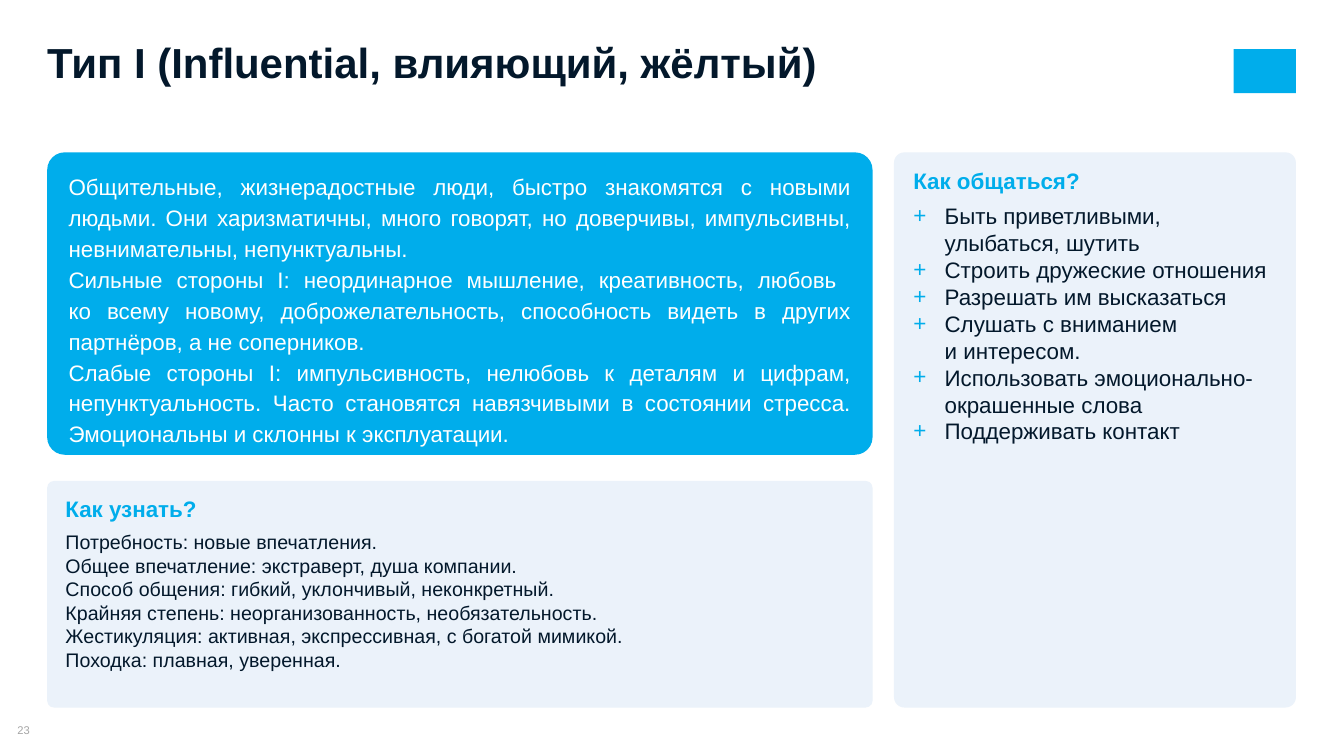
from copy import deepcopy

from lxml.etree import SubElement
from pptx import Presentation
from pptx.dml.color import RGBColor
from pptx.enum.shapes import MSO_SHAPE
from pptx.enum.text import MSO_ANCHOR, MSO_AUTO_SIZE, PP_ALIGN
from pptx.oxml.ns import qn
from pptx.util import Cm, Pt

COLORS = {
    "accent": "00ADEB",
    "ink": "03182B",
    "panel": "EBF2FA",
    "white": "FFFFFF",
    "muted": "A6A6A6",
}
LEFT, TOP, BOTTOM = 1.19, 3.84, 17.83
WIDE, SIDE_LEFT, SIDE_WIDE = 20.8, 22.53, 10.13
PAD_X, PAD_TOP, RADIUS_INSET = 0.41, 0.3, 0.29

TRAITS = [
    "Общительные, жизнерадостные люди, быстро знакомятся с новыми людьми. "
    "Они харизматичны, много говорят, но доверчивы, импульсивны, "
    "невнимательны, непунктуальны.",
    "Сильные стороны I: неординарное мышление, креативность, любовь \n"
    "ко всему новому, доброжелательность, способность видеть в других "
    "партнёров, а не соперников.",
    "Слабые стороны I: импульсивность, нелюбовь к деталям и цифрам, "
    "непунктуальность. Часто становятся навязчивыми в состоянии стресса. "
    "Эмоциональны и склонны к эксплуатации.",
]
SIGNS = [
    "Потребность: новые впечатления.",
    "Общее впечатление: экстраверт, душа компании.",
    "Способ общения: гибкий, уклончивый, неконкретный.",
    "Крайняя степень: неорганизованность, необязательность.",
    "Жестикуляция: активная, экспрессивная, с богатой мимикой.",
    "Походка: плавная, уверенная.",
]
ADVICE = [
    "Быть приветливыми, улыбаться, шутить",
    "Строить дружеские отношения",
    "Разрешать им высказаться",
    "Слушать с вниманием \nи интересом.",
    "Использовать эмоционально-окрашенные слова",
    "Поддерживать контакт",
]


def color(name):
    return RGBColor.from_string(COLORS[name])


def set_bullet(paragraph, sign):
    properties = paragraph._p.get_or_add_pPr()
    indent = Cm(0.79) if sign else 0
    properties.set("marL", str(indent))
    properties.set("indent", str(-indent))
    if sign:
        tint = SubElement(properties, qn("a:buClr"))
        SubElement(tint, qn("a:srgbClr"), val=COLORS["accent"])
        SubElement(properties, qn("a:buFont"), typeface="Arial")
        SubElement(properties, qn("a:buChar"), char=sign)
    else:
        SubElement(properties, qn("a:buNone"))


def write(frame, text, size=16, tint="ink", bold=False, align=PP_ALIGN.LEFT,
          spacing=1.0, after=0, bullet=None):
    paragraph = frame.paragraphs[0]
    if paragraph.runs:
        paragraph = frame.add_paragraph()
    paragraph.text = text
    paragraph.alignment = align
    paragraph.line_spacing = spacing
    paragraph.space_before = Pt(0)
    paragraph.space_after = Pt(after)
    set_bullet(paragraph, bullet)
    for run in paragraph.runs:
        run.font.name = "Arial"
        run.font.size = Pt(size)
        run.font.bold = bold
        run.font.color.rgb = color(tint)
    for line_break in paragraph._p.findall(qn("a:br")):
        line_break.append(deepcopy(paragraph.runs[0]._r.rPr))


def place(holder, left, top, width, height):
    holder.left, holder.top = Cm(left), Cm(top)
    holder.width, holder.height = Cm(width), Cm(height)


def set_frame(holder, pad_x=0, pad_top=0, anchor=MSO_ANCHOR.TOP):
    frame = holder.text_frame
    frame.word_wrap = True
    frame.auto_size = MSO_AUTO_SIZE.NONE
    frame.vertical_anchor = anchor
    frame.margin_left = frame.margin_right = Cm(pad_x)
    frame.margin_top, frame.margin_bottom = Cm(pad_top), Cm(0)
    return frame


def add_block(slide, kind, tint, left, top, width, height):
    block = slide.shapes.add_shape(kind, Cm(left), Cm(top), Cm(width), Cm(height))
    block.shadow.inherit = False
    block.fill.solid()
    block.fill.fore_color.rgb = color(tint)
    block.line.fill.background()
    return block


def add_panel(slide, tint, rounding, *box):
    panel = add_block(slide, MSO_SHAPE.ROUNDED_RECTANGLE, tint, *box)
    panel.adjustments[0] = rounding
    slide.shapes._spTree.insert(2, panel._element)
    return panel


def fill_list_panel(slide, body, rounding, box, heading, items, **item_format):
    add_panel(slide, "panel", rounding, *box)
    place(body, *box)
    inset = RADIUS_INSET * rounding * min(box[2:])
    frame = set_frame(body, PAD_X + inset, PAD_TOP + inset)
    write(frame, heading, tint="accent", bold=True, after=6)
    for item in items:
        write(frame, item, **item_format)


def add_page_number(slide, number):
    page = slide.shapes.add_textbox(Cm(0), Cm(18.24), Cm(1.19), Cm(0.33))
    frame = set_frame(page, anchor=MSO_ANCHOR.MIDDLE)
    write(frame, number, size=8, tint="muted", align=PP_ALIGN.CENTER)


def main():
    deck = Presentation()
    deck.slide_width, deck.slide_height = Cm(33.87), Cm(19.05)
    slide = deck.slides.add_slide(deck.slide_layouts[3])
    title, signs, advice = slide.placeholders

    place(title, LEFT, 1.17, 26.7, 1.02)
    write(set_frame(title), "Тип I (Influential, влияющий, жёлтый)",
          size=30, bold=True, spacing=0.8)

    fill_list_panel(slide, advice, 0.026, (SIDE_LEFT, TOP, SIDE_WIDE, BOTTOM - TOP),
                    "Как общаться?", ADVICE, bullet="+")
    fill_list_panel(slide, signs, 0.03, (LEFT, 12.12, WIDE, BOTTOM - 12.12),
                    "Как узнать?", SIGNS, size=14)

    traits = add_panel(slide, "accent", 0.058, LEFT, TOP, WIDE, 7.62)
    traits_frame = set_frame(traits, PAD_X, PAD_TOP)
    for trait in TRAITS:
        write(traits_frame, trait, tint="white", align=PP_ALIGN.JUSTIFY, spacing=1.15)

    add_block(slide, MSO_SHAPE.RECTANGLE, "accent", 31.09, 1.24, 1.57, 1.11)
    add_page_number(slide, "23")
    deck.save("out.pptx")


if __name__ == "__main__":
    main()
